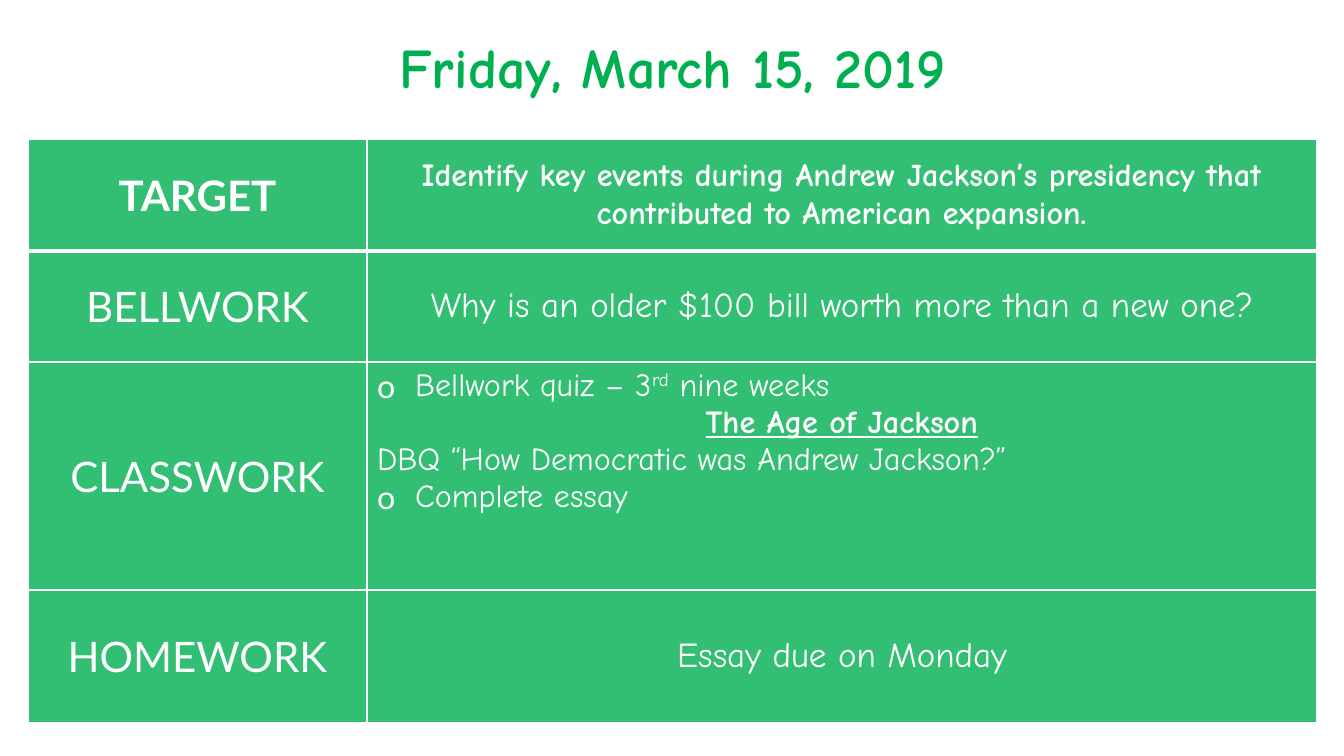
import pptx
import pptx.util
import pptx.dml.color
import pptx.enum.text
import pptx.oxml
import pptx.oxml.ns
from dataclasses import dataclass

# Content: each cell is a list of paragraphs, each paragraph a list of runs
TITLE = "Friday, March 15, 2019"
ROWS = [
    ("TARGET", "Identify key events during Andrew Jackson’s presidency that "
               "contributed to American expansion."),
    ("BELLWORK", "Why is an older $100 bill worth more than a new one?"),
    ("CLASSWORK", [
        ("bullet", [("Bellwork quiz – 3", {}), ("rd", {"rise": 30}),
                    (" nine weeks", {})]),
        ("center", [("The Age of Jackson", {"bold": True, "under": True})]),
        ("left", [("DBQ “How Democratic was Andrew Jackson?”", {})]),
        ("bullet", [("Complete essay", {})]),
    ]),
    ("HOMEWORK", "Essay due on Monday"),
]

# Layout in px
PX = 914400 / 100.8
SLIDE = (1344, 756)
LEFT, TOP = 28, 139
COLS = [339, 950]
HIGHS = [112, 111, 228, 133]
HEAD = (16, 101)
INDENT = 38


@dataclass
class Theme:
    green: str = "00B050"
    white: str = "FFFFFF"
    hand: str = "Comic Neue"
    sans: str = "Lato"
    title: int = 40
    label: int = 30
    large: int = 25
    small: int = 23


theme = Theme()
ALIGN = pptx.enum.text.PP_ALIGN
MIDDLE = pptx.enum.text.MSO_ANCHOR.MIDDLE


def px(num):
    return pptx.util.Emu(round(num * PX))


def rgb(code):
    return pptx.dml.color.RGBColor.from_string(code)


def xml(body):
    return pptx.oxml.parse_xml(
        body.replace(" ", f" {pptx.oxml.ns.nsdecls('a')} ", 1))


def paint(fill, code, alpha):
    """Fill with a colour at the given opacity in percent."""
    fill.solid()
    fill.fore_color.rgb = rgb(code)
    tone = fill._xPr.find(".//" + pptx.oxml.ns.qn("a:srgbClr"))
    tone.append(xml(f'<a:alpha val="{alpha * 1000}"/>'))


def write(par, text, size=theme.small, face=theme.hand, color=theme.white,
          bold=False, under=False, rise=0):
    run = par.add_run()
    run.text = text
    font = run.font
    font.size, font.name = pptx.util.Pt(size), face
    font.bold, font.underline = bold, under
    font.color.rgb = rgb(color)
    if rise:
        run._r.get_or_add_rPr().set("baseline", str(rise * 1000))


def bullet(par):
    props = par._p.get_or_add_pPr()
    props.set("marL", str(px(INDENT)))
    props.set("indent", str(-px(INDENT)))
    props.append(xml(f'<a:buFont typeface="{theme.sans}"/>'))
    props.append(xml('<a:buChar char="o"/>'))


def border(cell, row):
    """Thin white lines, with a thick one under the first row."""
    wide = {(0, "B"): 3, (1, "T"): 3}
    for spot, side in enumerate("LRTB"):
        width = pptx.util.Pt(wide.get((row, side), 1))
        cell._tc.get_or_add_tcPr().insert(spot, xml(
            f'<a:ln{side} w="{width}"><a:solidFill>'
            f'<a:srgbClr val="{theme.white}"/></a:solidFill></a:ln{side}>'))


def center(cell, text, **style):
    cell.vertical_anchor = MIDDLE
    par = cell.text_frame.paragraphs[0]
    par.alignment = ALIGN.CENTER
    write(par, text, **style)


def listing(cell, pars):
    frame = cell.text_frame
    for num, (kind, runs) in enumerate(pars):
        par = frame.add_paragraph() if num else frame.paragraphs[0]
        par.alignment = ALIGN.CENTER if kind == "center" else ALIGN.LEFT
        if kind == "bullet":
            bullet(par)
        for text, style in runs:
            write(par, text, **style)


def main():
    deck = pptx.Presentation()
    deck.slide_width, deck.slide_height = map(px, SLIDE)
    slide = deck.slides.add_slide(deck.slide_layouts[5])
    wide = sum(COLS)

    # Agenda table
    frame = slide.shapes.add_table(len(ROWS), len(COLS), px(LEFT), px(TOP),
                                   px(wide), px(sum(HIGHS)))
    table = frame.table
    table.first_row = table.horz_banding = False
    for col, width in zip(table.columns, COLS):
        col.width = px(width)
    for num, (label, body) in enumerate(ROWS):
        table.rows[num].height = px(HIGHS[num])
        first, second = table.cell(num, 0), table.cell(num, 1)
        top = num == 0
        center(first, label, size=theme.label, face=theme.sans, bold=top)
        if isinstance(body, str):
            size = theme.small if top else theme.large
            center(second, body, size=size, bold=top)
        else:
            listing(second, body)
        for cell in (first, second):
            paint(cell.fill, theme.green, 80)
            border(cell, num)

    # Date title, in front of the table
    title = slide.shapes.title
    title.left, title.top = px(LEFT), px(HEAD[0])
    title.width, title.height = px(wide), px(HEAD[1])
    paint(title.fill, theme.white, 65)
    box = title.text_frame
    box.word_wrap = True
    box.auto_size = pptx.enum.text.MSO_AUTO_SIZE.NONE
    box.vertical_anchor = MIDDLE
    box.paragraphs[0].alignment = ALIGN.CENTER
    write(box.paragraphs[0], TITLE, size=theme.title, color=theme.green,
          bold=True)
    slide.shapes._spTree.append(title._element)

    deck.save("out.pptx")


if __name__ == "__main__":
    main()
